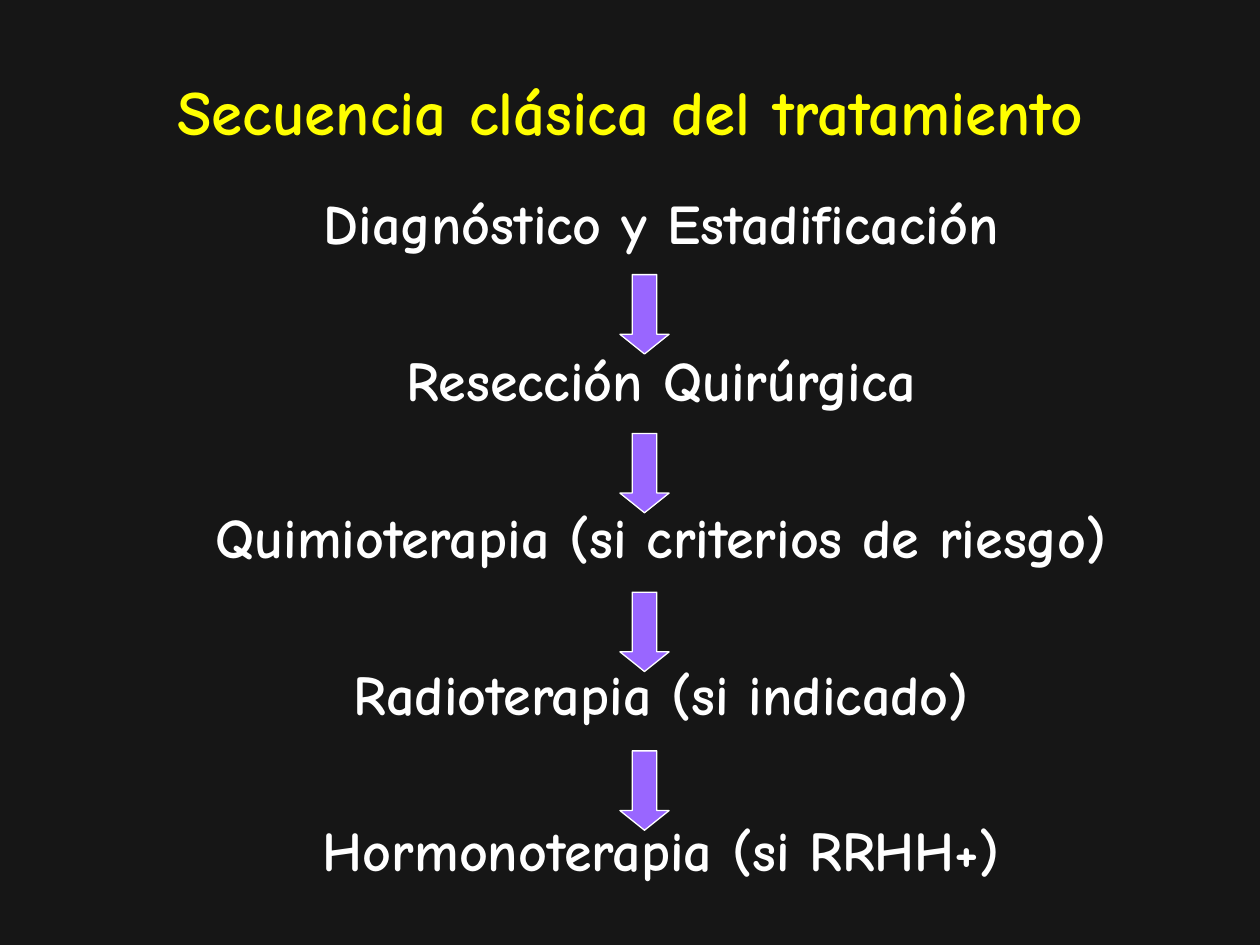
from pptx import Presentation
from pptx.dml.color import RGBColor
from pptx.enum.shapes import MSO_SHAPE
from pptx.enum.text import MSO_ANCHOR, PP_ALIGN
from pptx.util import Inches, Pt

DOWN_ARROW = MSO_SHAPE.DOWN_ARROW
CENTER = PP_ALIGN.CENTER
TOP, MIDDLE = MSO_ANCHOR.TOP, MSO_ANCHOR.MIDDLE

TITLE = "Secuencia clásica del tratamiento"
STEPS = [
    "Diagnóstico y Estadificación",
    "Resección Quirúrgica",
    "Quimioterapia (si criterios de riesgo)",
    "Radioterapia (si indicado)",
    "Hormonoterapia (si RRHH+)",
]
FONT = "Comic Neue"
BACKGROUND, YELLOW, WHITE, PURPLE = "161616", "FFFF00", "FFFFFF", "9966FF"

LEFT, WIDTH = 0.33, 9.34
ARROW_LEFT, ARROW_TOP, ARROW_PITCH = 4.92, 2.18, 1.26
ARROW_WIDTH, ARROW_HEIGHT = 0.39, 0.63
LINE_HEIGHT, STEP_PITCH = 37, 89.6  # points


def paint(fill, color):
    fill.solid()
    fill.fore_color.rgb = RGBColor.from_string(color)


def write(frame, lines, size, color, anchor=TOP, line_height=None, gap=0):
    """Fill a text frame with centred bold lines, gap points apart."""
    frame.word_wrap = True
    frame.vertical_anchor = anchor
    for index, line in enumerate(lines):
        para = frame.paragraphs[0] if index == 0 else frame.add_paragraph()
        para.alignment = CENTER
        para.space_before = Pt(gap if index else 0)
        if line_height:
            para.line_spacing = Pt(line_height)
        span = para.add_run()
        span.text = line
        span.font.name = FONT
        span.font.size = Pt(size)
        span.font.bold = True
        span.font.color.rgb = RGBColor.from_string(color)


def add_arrow(page, top):
    arrow = page.shapes.add_shape(
        DOWN_ARROW, Inches(ARROW_LEFT), Inches(top),
        Inches(ARROW_WIDTH), Inches(ARROW_HEIGHT))
    arrow.adjustments[0] = 0.5
    arrow.adjustments[1] = 0.4
    arrow.shadow.inherit = False
    paint(arrow.fill, PURPLE)
    paint(arrow.line.fill, WHITE)
    arrow.line.width = Pt(0.75)


def main():
    deck = Presentation()
    deck.slide_width, deck.slide_height = Inches(10), Inches(7.5)
    page = deck.slides.add_slide(deck.slide_layouts[5])
    paint(page.background.fill, BACKGROUND)

    title = page.shapes.title
    title.left, title.top = Inches(LEFT), Inches(0.25)
    title.width, title.height = Inches(WIDTH), Inches(1.25)
    write(title.text_frame, [TITLE], 36, YELLOW, anchor=MIDDLE)

    box = page.shapes.add_textbox(
        Inches(LEFT), Inches(1.47), Inches(WIDTH), Inches(5.2))
    box.text_frame.margin_left = Inches(0.6)
    write(box.text_frame, STEPS, 32, WHITE,
          line_height=LINE_HEIGHT, gap=STEP_PITCH - LINE_HEIGHT)

    for index in range(len(STEPS) - 1):
        add_arrow(page, ARROW_TOP + index * ARROW_PITCH)

    deck.save("out.pptx")


if __name__ == "__main__":
    main()
